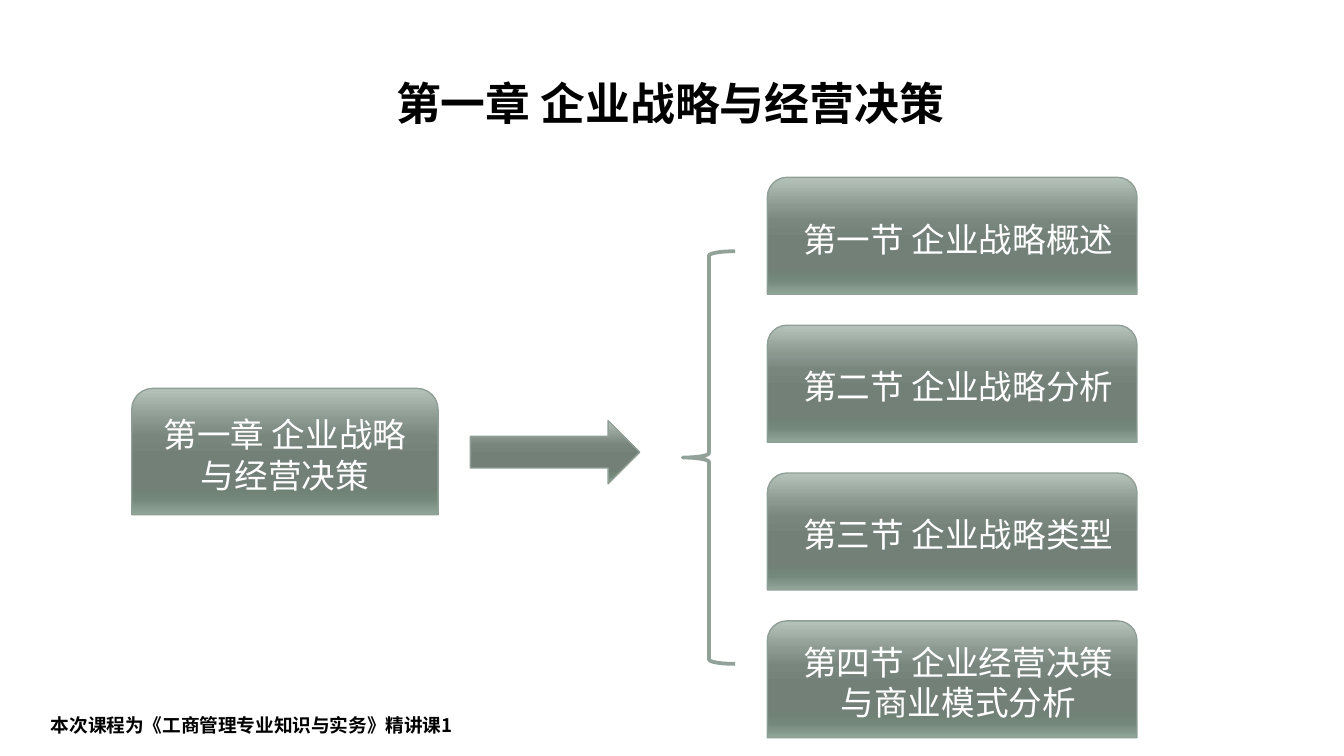
import pptx
import pptx.util
import pptx.dml.color
import pptx.enum.shapes
import pptx.enum.text
import pptx.oxml.ns
import lxml.etree

TITLE = "第一章 企业战略与经营决策"
SECTIONS = [
    "第一节 企业战略概述",
    "第二节 企业战略分析",
    "第三节 企业战略类型",
    "第四节 企业经营决策与商业模式分析",
]
FOOTER = "本次课程为《工商管理专业知识与实务》精讲课1"

COLORS = {"text": "000000", "box_text": "FFFFFF", "edge": "8F9F96", "brace": "93A299"}
GRADIENT = [(0, "B6C3BB"), (25, "8B9890"), (38, "79867E"), (55, "728078"),
            (80, "708176"), (88, "75887C"), (100, "91A79A")]
FONTS = {"body": "League Spartan", "chinese": "Noto Sans CJK SC"}

WIDTH = 10
HEIGHT = WIDTH * 9 / 16
SECTION_LEFT, SECTION_TOP, SECTION_PITCH = 5.71, 1.32, 1.1
SECTION_SIZE = (2.75, 0.87)

SHAPE = pptx.enum.shapes.MSO_SHAPE
ALIGN = pptx.enum.text.PP_ALIGN
ANCHOR = pptx.enum.text.MSO_ANCHOR
qn = pptx.oxml.ns.qn


def rgb(name):
    return pptx.dml.color.RGBColor.from_string(COLORS[name])


def inches(*values):
    return [pptx.util.Inches(v) for v in values]


def set_text(sp, text, size=18, color="box_text", font="body", bold=False,
             align=ALIGN.CENTER, anchor=ANCHOR.MIDDLE, indent=0):
    tf = sp.text_frame
    tf.word_wrap = True
    tf.auto_size = pptx.enum.text.MSO_AUTO_SIZE.NONE
    tf.vertical_anchor = anchor
    p = tf.paragraphs[0]
    p.alignment = align
    if indent:
        p._p.get_or_add_pPr().set("marL", str(pptx.util.Inches(indent)))
    r = p.add_run()
    r.text = text
    r.font.size = pptx.util.Pt(size)
    r.font.bold = bold
    r.font.color.rgb = rgb(color)
    r.font.name = FONTS[font]
    ea = lxml.etree.SubElement(r._r.get_or_add_rPr(), qn("a:ea"))
    ea.set("typeface", FONTS["chinese"])


def set_gradient(sp):
    sp.fill.gradient()
    sp.fill.gradient_angle = 270
    stops = sp._element.spPr.find(qn("a:gradFill")).find(qn("a:gsLst"))
    for stop in list(stops):
        stops.remove(stop)
    for percent, color in GRADIENT:
        stop = lxml.etree.SubElement(stops, qn("a:gs"), pos=str(percent * 1000))
        lxml.etree.SubElement(stop, qn("a:srgbClr"), val=color)


def add_shape(s, kind, box, line="edge", weight=0.75, gradient=True):
    sp = s.shapes.add_shape(kind, *inches(*box))
    sp.shadow.inherit = False
    sp.line.color.rgb = rgb(line)
    sp.line.width = pptx.util.Pt(weight)
    if gradient:
        set_gradient(sp)
    else:
        sp.fill.background()
    return sp


def main():
    prs = pptx.Presentation()
    prs.slide_width, prs.slide_height = inches(WIDTH, HEIGHT)
    s = prs.slides.add_slide(prs.slide_layouts[5])

    title = s.shapes.title
    title.left, title.top, title.width, title.height = inches(0.47, 0.34, 9.03, 0.85)
    set_text(title, TITLE, size=24, color="text", font="chinese", bold=True)

    footer = s.shapes.add_textbox(*inches(0.28, 5.26, 6.31, 0.27))
    set_text(footer, FOOTER, size=10, color="text", font="chinese", bold=True,
             align=ALIGN.LEFT, anchor=ANCHOR.TOP)

    chapter = add_shape(s, SHAPE.ROUND_2_SAME_RECTANGLE, (0.98, 2.89, 2.28, 0.94))
    set_text(chapter, TITLE)

    for i, text in enumerate(SECTIONS):
        top = SECTION_TOP + i * SECTION_PITCH
        section = add_shape(s, SHAPE.ROUND_2_SAME_RECTANGLE,
                            (SECTION_LEFT, top, *SECTION_SIZE))
        set_text(section, text, indent=0.09)

    add_shape(s, SHAPE.RIGHT_ARROW, (3.5, 3.13, 1.26, 0.47))
    add_shape(s, SHAPE.LEFT_BRACE, (5.08, 1.87, 0.39, 3.07),
              line="brace", weight=2, gradient=False)

    prs.save("out.pptx")


if __name__ == "__main__":
    main()
